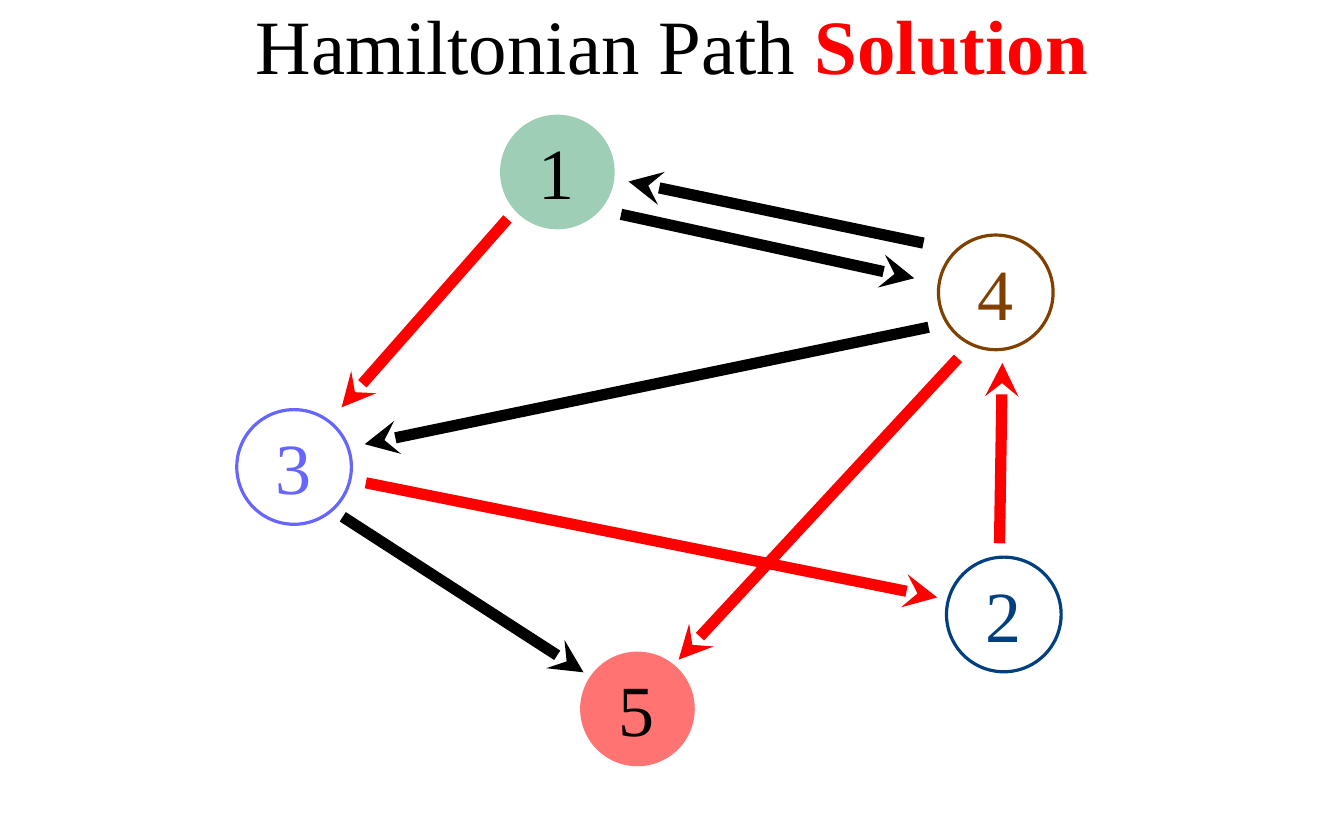
"""Build a slide that shows the solution of a Hamiltonian path problem."""
from lxml import etree
from pptx import Presentation
from pptx import util as u
from pptx.dml.color import RGBColor
from pptx.enum import shapes, text
from pptx.oxml import ns

COLOURS = {
    "black": "000000",
    "red": "FF0000",
    "green": "008040",
    "brown": "804000",
    "navy": "004080",
    "violet": "6666FF",
}
DIAMETER = 1.99


def colour(name):
    return RGBColor.from_string(COLOURS[name])


def write(para, content, size, ink="black", bold=False):
    para.alignment = text.PP_ALIGN.CENTER
    span = para.add_run()
    span.text = content
    span.font.name = "Times New Roman"
    span.font.size = u.Pt(size)
    span.font.bold = bold
    span.font.color.rgb = colour(ink)


deck = Presentation()
deck.slide_width = u.Inches(23.33)
deck.slide_height = u.Inches(14.58)
page = deck.slides.add_slide(deck.slide_layouts[5])

title = page.shapes.title
title.left, title.top = u.Inches(0), u.Inches(-0.1)
title.width, title.height = deck.slide_width, u.Inches(1.71)
title_para = title.text_frame.paragraphs[0]
write(title_para, "Hamiltonian Path ", size=96)
write(title_para, "Solution", size=96, ink="red", bold=True)

nodes = [
    ("1", 8.68, 1.99, "green", 38),
    ("4", 16.29, 4.08, "brown", None),
    ("2", 16.43, 9.67, "navy", None),
    ("5", 10.07, 11.31, "red", 55),
    ("3", 4.11, 7.11, "violet", None),
]
label_boxes = []
for label, left, top, ink, opacity in nodes:
    node = page.shapes.add_group_shape()
    circle = node.shapes.add_shape(
        shapes.MSO_SHAPE.OVAL, u.Inches(left), u.Inches(top),
        u.Inches(DIAMETER), u.Inches(DIAMETER))
    circle.shadow.inherit = False
    if opacity:
        circle.fill.solid()
        circle.fill.fore_color.rgb = colour(ink)
        fill_colour = circle.fill._xPr.find(".//" + ns.qn("a:srgbClr"))
        etree.SubElement(fill_colour, ns.qn("a:alpha"), val=str(opacity * 1000))
        circle.line.fill.background()
    else:
        circle.fill.background()
        circle.line.color.rgb = colour(ink)
        circle.line.width = u.Pt(4)
    box = node.shapes.add_textbox(
        u.Inches(left + 0.61), u.Inches(top + 0.16), u.Inches(0.75), u.Inches(1.64))
    write(box.text_frame.paragraphs[0], label, size=90, ink="black" if opacity else ink)
    box.text_frame.word_wrap = False
    box.text_frame.auto_size = text.MSO_AUTO_SIZE.SHAPE_TO_FIT_TEXT
    label_boxes.append(box)

title.text_frame.word_wrap = True
title.text_frame.auto_size = text.MSO_AUTO_SIZE.NONE
for frame in [title.text_frame] + [box.text_frame for box in label_boxes]:
    frame.vertical_anchor = text.MSO_ANCHOR.MIDDLE
    frame.margin_left = frame.margin_right = 0
    frame.margin_top = frame.margin_bottom = 0

edges = [
    ((16.03, 4.22), (10.91, 3.15), "black"),
    ((8.81, 3.8), (5.93, 7.07), "red"),
    ((10.78, 3.72), (15.87, 4.83), "black"),
    ((6.35, 8.38), (16.27, 10.37), "red"),
    ((16.63, 6.22), (11.78, 11.45), "red"),
    ((16.12, 5.68), (6.33, 7.71), "black"),
    ((17.35, 9.43), (17.4, 6.3), "red"),
    ((5.95, 8.97), (10.13, 11.67), "black"),
]
for start, tip, ink in edges:
    arrow = page.shapes.add_connector(
        shapes.MSO_CONNECTOR.STRAIGHT, *map(u.Inches, start + tip))
    arrow.line.color.rgb = colour(ink)
    arrow.line.width = u.Pt(14)
    etree.SubElement(arrow.line._ln, ns.qn("a:tailEnd"), type="stealth")
    etree.SubElement(arrow._element.spPr, ns.qn("a:effectLst"))

deck.save("out.pptx")
